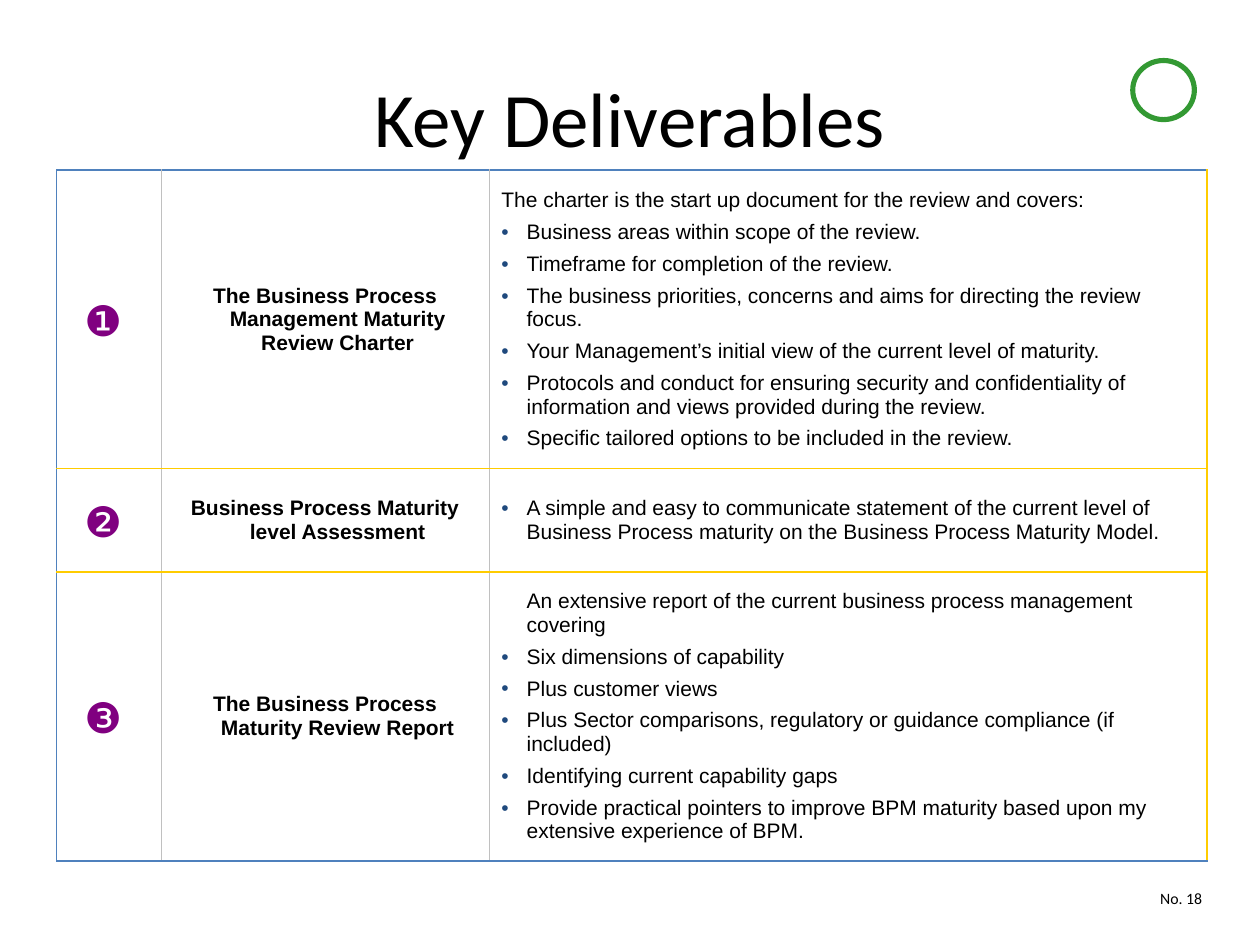
from lxml.etree import SubElement
from pptx import Presentation
from pptx.dml.color import RGBColor
from pptx.enum.shapes import MSO_SHAPE
from pptx.enum.text import MSO_ANCHOR, PP_ALIGN
from pptx.oxml.ns import qn
from pptx.util import Inches, Pt

BLACK = RGBColor(0x00, 0x00, 0x00)
WHITE = RGBColor(0xFF, 0xFF, 0xFF)
GREEN = RGBColor(0x33, 0x99, 0x33)
PURPLE = RGBColor(0x80, 0x00, 0x80)
NAVY = RGBColor(0x1F, 0x49, 0x7D)
BLUE = RGBColor(0x4F, 0x81, 0xBD)
YELLOW = RGBColor(0xFF, 0xCC, 0x00)
GREY = RGBColor(0xC0, 0xC0, 0xC0)

DELIVERABLES = [
    ("❶", "The Business Process Management Maturity Review Charter",
     "The charter is the start up document for the review and covers:", -0.2,
     ["Business areas within scope of the review.",
      "Timeframe for completion of the review.",
      "The business priorities, concerns and aims for directing the review focus.",
      "Your Management’s initial view of the current level of maturity.",
      "Protocols and conduct for ensuring security and confidentiality of "
      "information and views provided during the review.",
      "Specific tailored options to be included in the review."]),
    ("❷", "Business Process Maturity level Assessment", None, 0,
     ["A simple and easy to communicate statement of the current level of "
      "Business Process maturity on the Business Process Maturity Model."]),
    ("❸", "The Business Process Maturity Review Report",
     "An extensive report of the current business process management covering", 0,
     ["Six dimensions of capability",
      "Plus customer views",
      "Plus Sector comparisons, regulatory or guidance compliance (if included)",
      "Identifying current capability gaps",
      "Provide practical pointers to improve BPM maturity based upon my "
      "extensive experience of BPM."]),
]
TABLE_LEFT = 0.45
TABLE_TOP = 1.35
COLUMN_WIDTHS = [0.83, 2.6, 5.7]
ROW_HEIGHTS = [2.37, 0.82, 2.29]


def add_text(paragraph, text, size, font_name, color=BLACK, bold=False):
    paragraph.font.size = Pt(size)
    run = paragraph.add_run()
    run.text = text
    run.font.size = Pt(size)
    run.font.name = font_name
    run.font.color.rgb = color
    run.font.bold = bold


def set_indent(paragraph, first_line, bullet=False):
    properties = paragraph._p.get_or_add_pPr()
    properties.set("marL", str(Inches(0.2)))
    properties.set("indent", str(Inches(first_line)))
    if bullet:
        bullet_color = SubElement(properties, qn("a:buClr"))
        SubElement(bullet_color, qn("a:srgbClr"), val=str(NAVY))
        SubElement(properties, qn("a:buFont"), typeface="Arial")
        SubElement(properties, qn("a:buChar"), char="•")
    else:
        SubElement(properties, qn("a:buNone"))


presentation = Presentation()
presentation.slide_width = Inches(10)
presentation.slide_height = Inches(7.5)
slide = presentation.slides.add_slide(presentation.slide_layouts[6])

ring = slide.shapes.add_shape(
    MSO_SHAPE.DONUT, Inches(8.97), Inches(0.46), Inches(0.53), Inches(0.51))
ring.adjustments[0] = 0.08
ring.shadow.inherit = False
ring.fill.solid()
ring.fill.fore_color.rgb = GREEN
ring.line.fill.background()

page_box = slide.shapes.add_textbox(
    Inches(8.69), Inches(7.02), Inches(0.85), Inches(0.18))
page_frame = page_box.text_frame
page_frame.margin_left = page_frame.margin_right = 0
page_frame.margin_top = page_frame.margin_bottom = 0
page_frame.vertical_anchor = MSO_ANCHOR.BOTTOM
page_frame.word_wrap = True
page_frame.paragraphs[0].alignment = PP_ALIGN.RIGHT
add_text(page_frame.paragraphs[0], "No. 18", 9, "Calibri")

title_box = slide.shapes.add_textbox(
    Inches(0.5), Inches(0.3), Inches(9), Inches(1.25))
title_frame = title_box.text_frame
title_frame.word_wrap = True
title_frame.vertical_anchor = MSO_ANCHOR.MIDDLE
title_frame.paragraphs[0].alignment = PP_ALIGN.CENTER
add_text(title_frame.paragraphs[0], "Key Deliverables", 44, "Calibri")

table = slide.shapes.add_table(
    len(ROW_HEIGHTS), len(COLUMN_WIDTHS), Inches(TABLE_LEFT), Inches(TABLE_TOP),
    Inches(sum(COLUMN_WIDTHS)), Inches(sum(ROW_HEIGHTS))).table
table.first_row = False
table.horz_banding = False
for column, width in zip(table.columns, COLUMN_WIDTHS):
    column.width = Inches(width)
for row, height in zip(table.rows, ROW_HEIGHTS):
    row.height = Inches(height)

last_row = len(ROW_HEIGHTS) - 1
last_column = len(COLUMN_WIDTHS) - 1
for row_index, row in enumerate(table.rows):
    for column_index, cell in enumerate(row.cells):
        borders = {
            "a:lnL": (BLUE, 0.5) if column_index == 0 else (GREY, 0.25),
            "a:lnR": (YELLOW, 1) if column_index == last_column else (GREY, 0.25),
            "a:lnT": (BLUE if row_index == 0 else YELLOW, 1),
            "a:lnB": (BLUE if row_index == last_row else YELLOW, 1),
        }
        cell_properties = cell._tc.get_or_add_tcPr()
        for tag, (color, width) in borders.items():
            border = SubElement(cell_properties, qn(tag), w=str(Pt(width)))
            border_fill = SubElement(border, qn("a:solidFill"))
            SubElement(border_fill, qn("a:srgbClr"), val=str(color))
        if column_index == 0:
            cell.fill.background()
        else:
            cell.fill.solid()
            cell.fill.fore_color.rgb = WHITE
        cell.vertical_anchor = MSO_ANCHOR.MIDDLE
        cell.margin_left = cell.margin_right = Inches(0.1)
        cell.margin_top = cell.margin_bottom = Inches(0.08)

row_top = TABLE_TOP
for row, height, deliverable in zip(table.rows, ROW_HEIGHTS, DELIVERABLES):
    number, name, intro, intro_indent, points = deliverable
    number_box = slide.shapes.add_textbox(
        Inches(0.57), Inches(row_top), Inches(0.5), Inches(height))
    number_frame = number_box.text_frame
    number_frame.word_wrap = True
    number_frame.margin_left = number_frame.margin_right = 0
    number_frame.vertical_anchor = MSO_ANCHOR.MIDDLE
    number_frame.paragraphs[0].alignment = PP_ALIGN.CENTER
    add_text(number_frame.paragraphs[0], number, 24, "Arial", PURPLE)
    row_top += height

    name_paragraph = row.cells[1].text_frame.paragraphs[0]
    set_indent(name_paragraph, -0.2)
    name_paragraph.alignment = PP_ALIGN.CENTER
    add_text(name_paragraph, name, 12, "Arial", bold=True)

    detail_frame = row.cells[2].text_frame
    details = [(point, -0.2, True) for point in points]
    if intro:
        details.insert(0, (intro, intro_indent, False))
    for index, (text, indent, bullet) in enumerate(details):
        paragraph = detail_frame.add_paragraph() if index else detail_frame.paragraphs[0]
        set_indent(paragraph, indent, bullet)
        if index:
            paragraph.space_before = Pt(4.8)
        add_text(paragraph, text, 12, "Arial")

presentation.save("out.pptx")
